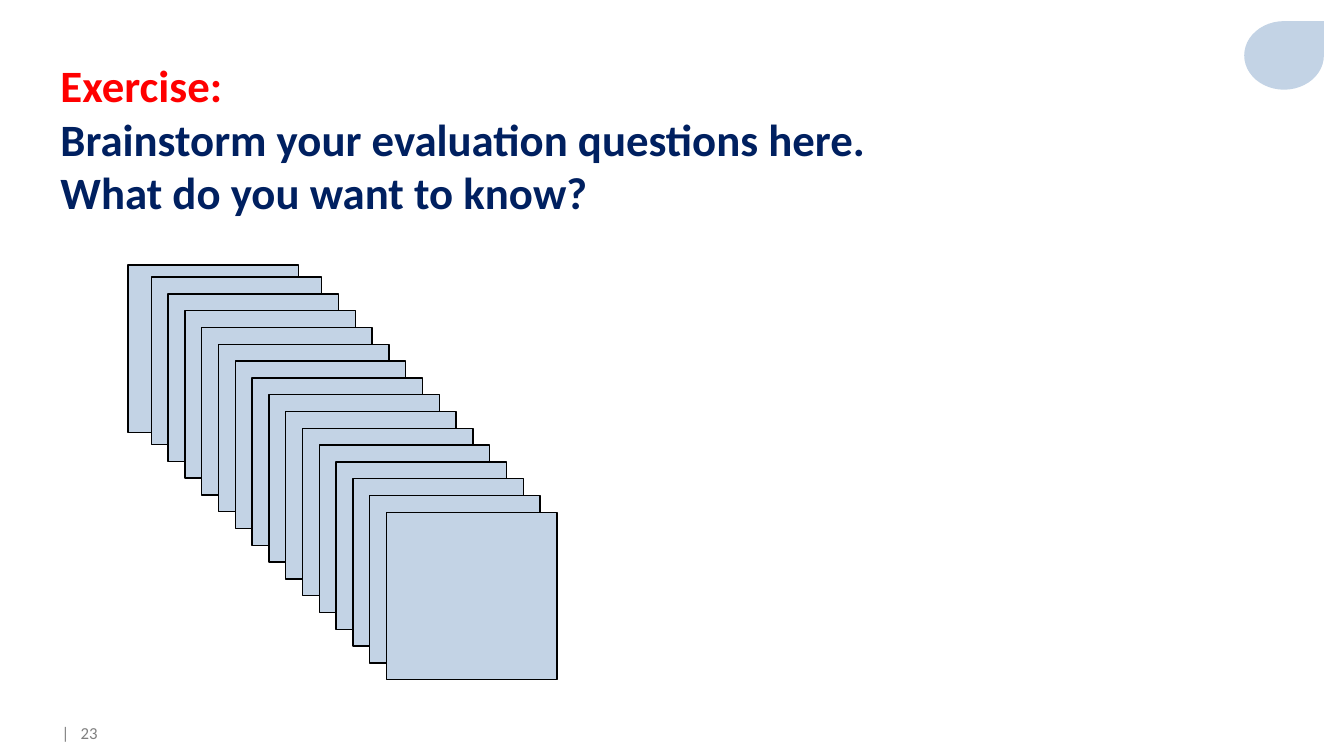
"""Build the brainstorming exercise slide with its stack of note cards."""
from lxml import etree
from pptx import Presentation
from pptx.dml.color import RGBColor
from pptx.enum.shapes import MSO_SHAPE as Shape
from pptx.enum.text import MSO_ANCHOR as Anchor, MSO_AUTO_SIZE as AutoSize, PP_ALIGN as Align
from pptx.oxml.ns import qn
from pptx.util import Inches, Pt

WIDTH, HEIGHT = 13.33, 7.5
PALE_BLUE = "C3D3E5"
TITLE_RUNS = [
    (["Exercise: "], "FF0000"),
    (["Brainstorm your evaluation questions here. ", "What do you want to know?"], "002060"),
]
TITLE_BOX = (0.6, 0.57, 11.9, 1.16)
PAGE_BOX = (0.12, 7.19, 0.85, 0.15)
PAGE_TEXT = "|\t23"
PAGE_TAB = 0.19
TEARDROP_BOX = (12.34, 0.21, 0.79, 0.68)
CARD_SIZE = (1.69, 1.66)
FIRST_CARD = (1.27, 2.63)
STACK_START = (1.5, 2.75)
STACK_COUNT = 15
STACK_STEP = 1 / 6
TITLE_FONT = {"name": "Calibri", "size": Pt(32), "bold": True}
PAGE_FONT = {"name": "Calibri", "size": Pt(12)}
TITLE_FRAME = {"margin_left": 0, "margin_top": 0, "margin_right": 0, "margin_bottom": 0,
               "vertical_anchor": Anchor.TOP, "word_wrap": True, "auto_size": AutoSize.NONE}
PAGE_FRAME = {"margin_left": Inches(0.49), "margin_top": Inches(0.05), "margin_right": 0,
              "margin_bottom": Inches(0.05), "vertical_anchor": Anchor.MIDDLE,
              "word_wrap": True, "auto_size": AutoSize.NONE}


def color(value):
    return RGBColor.from_string(value)


def apply(target, values):
    for name, value in values.items():
        setattr(target, name, value)


def inches(box):
    return [Inches(length) for length in box]


def style_font(font, values, value):
    apply(font, values)
    font.color.rgb = color(value)


def add_shape(slide, kind, box, outlined):
    shape = slide.shapes.add_shape(kind, *inches(box))
    shape.shadow.inherit = False
    shape.fill.solid()
    shape.fill.fore_color.rgb = color(PALE_BLUE)
    if outlined:
        shape.line.color.rgb = color("000000")
        shape.line.width = Pt(1)
    else:
        shape.line.fill.background()


def add_title(slide):
    title = slide.shapes.title
    apply(title, dict(zip(("left", "top", "width", "height"), inches(TITLE_BOX))))
    apply(title.text_frame, TITLE_FRAME)
    para = title.text_frame.paragraphs[0]
    apply(para, {"alignment": Align.LEFT, "line_spacing": 1.0})
    style_font(para.font, TITLE_FONT, TITLE_RUNS[-1][1])
    lines = [(line, value) for group, value in TITLE_RUNS for line in group]
    for index, (line, value) in enumerate(lines):
        if index:
            para.add_line_break()
        span = para.add_run()
        span.text = line
        style_font(span.font, TITLE_FONT, value)


def add_cards(slide):
    left, top = STACK_START
    stack = [(left + STACK_STEP * i, top + STACK_STEP * i) for i in range(STACK_COUNT)]
    for corner in [FIRST_CARD] + stack:
        add_shape(slide, Shape.RECTANGLE, corner + CARD_SIZE, True)


def add_page_number(slide):
    box = slide.shapes.add_textbox(*inches(PAGE_BOX))
    apply(box.text_frame, PAGE_FRAME)
    para = box.text_frame.paragraphs[0]
    para.alignment = Align.LEFT
    span = para.add_run()
    span.text = PAGE_TEXT
    style_font(span.font, PAGE_FONT, "808080")
    tabs = etree.SubElement(para._p.get_or_add_pPr(), qn("a:tabLst"))
    etree.SubElement(tabs, qn("a:tab"), pos=str(Inches(PAGE_TAB)), algn="l")


def main():
    deck = Presentation()
    deck.slide_width, deck.slide_height = Inches(WIDTH), Inches(HEIGHT)
    slide = deck.slides.add_slide(deck.slide_layouts[5])
    add_title(slide)
    add_cards(slide)
    add_shape(slide, Shape.TEAR, TEARDROP_BOX, False)
    add_page_number(slide)
    deck.save("out.pptx")


if __name__ == "__main__":
    main()
